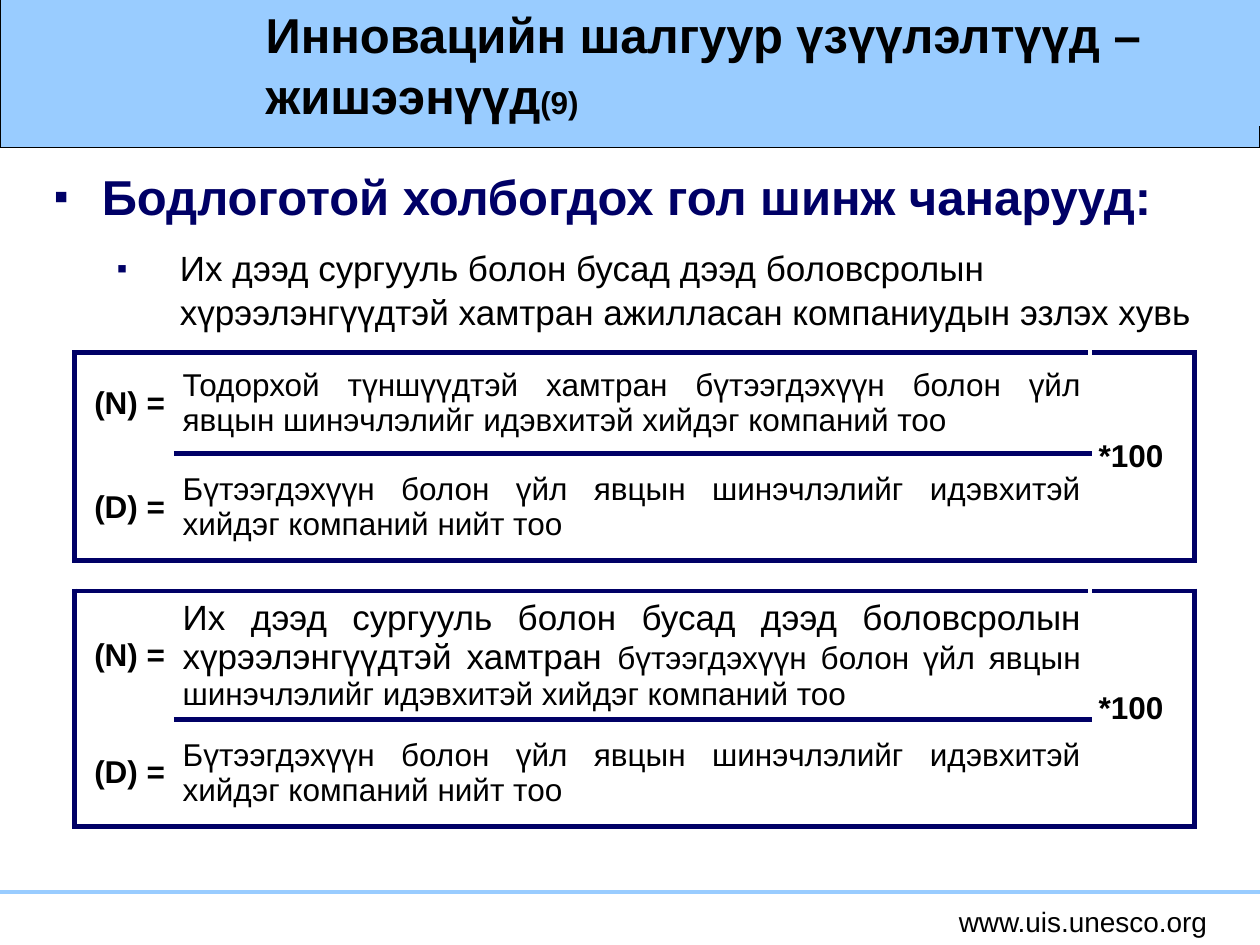
import pptx
import pptx.util
import pptx.dml.color
import pptx.enum.shapes
import pptx.enum.text
import pptx.oxml.ns
import lxml.etree

ALIGN = pptx.enum.text.PP_ALIGN
MIDDLE = pptx.enum.text.MSO_ANCHOR.MIDDLE
NAVY, SKY, BLACK, WHITE = "000066", "99CCFF", "000000", "FFFFFF"


def cell_unit(count):
    """Length of a number of grid cells; the slide is 100 columns by 75 rows."""
    return pptx.util.Inches(count / 10)


def colour(hex_text):
    return pptx.dml.color.RGBColor.from_string(hex_text)


def add_element(parent, tag, **attributes):
    element = lxml.etree.SubElement(parent, pptx.oxml.ns.qn(tag))
    for name, value in attributes.items():
        element.set(name, str(value))
    return element


def write(frame, runs, first=True, align=ALIGN.LEFT, colour_hex=BLACK, spacing=None,
          before=0, level=0, bullet_indent=None):
    """Write one paragraph; runs holds (text, size, bold), bullet_indent (margin, hanging)."""
    para = frame.paragraphs[0] if first else frame.add_paragraph()
    para.alignment, para.level = align, level
    if spacing:
        para.line_spacing = spacing
    if before:
        para.space_before = pptx.util.Pt(before)
    if bullet_indent:
        margin, hanging = bullet_indent
        properties = para._p.get_or_add_pPr()
        properties.set("marL", str(cell_unit(margin)))
        properties.set("indent", str(-cell_unit(hanging)))
        add_element(add_element(properties, "a:buClr"), "a:srgbClr", val=NAVY)
        add_element(properties, "a:buSzPct", val=85000)
        add_element(properties, "a:buFont", typeface="Arial")
        add_element(properties, "a:buChar", char="▪")
    for text, size, bold in runs:
        span = para.add_run()
        span.text = text
        span.font.name = "Arial"
        span.font.size = pptx.util.Pt(size)
        span.font.bold = bold
        span.font.color.rgb = colour(colour_hex)


def set_borders(cell, **sides):
    """Colour the named sides (L, R, T, B) and hide the others."""
    properties = cell._tc.get_or_add_tcPr()
    for side in "LRTB":
        line = add_element(properties, f"a:ln{side}", w=pptx.util.Pt(3))
        if side in sides:
            add_element(add_element(line, "a:solidFill"), "a:srgbClr", val=sides[side])
        else:
            add_element(line, "a:noFill")


class SlideBuilder:
    def __init__(self, deck):
        self.page = deck.slides.add_slide(deck.slide_layouts[6])

    def rectangle(self, *place, fill, line):
        kind = pptx.enum.shapes.MSO_SHAPE.RECTANGLE
        shape = self.page.shapes.add_shape(kind, *map(cell_unit, place))
        shape.shadow.inherit = False
        shape.fill.solid()
        shape.fill.fore_color.rgb = colour(fill)
        shape.line.color.rgb = colour(line)
        shape.line.width = pptx.util.Pt(0.75)

    def rule(self, *ends, line, width):
        kind = pptx.enum.shapes.MSO_CONNECTOR.STRAIGHT
        connector = self.page.shapes.add_connector(kind, *map(cell_unit, ends))
        connector.line.color.rgb = colour(line)
        connector.line.width = pptx.util.Pt(width)
        add_element(connector._element.spPr, "a:effectLst")

    def text_box(self, *place, wrap=True, fill=None, anchor=None):
        box = self.page.shapes.add_textbox(*map(cell_unit, place))
        box.text_frame.word_wrap = wrap
        if anchor is not None:
            box.text_frame.vertical_anchor = anchor
        if fill:
            box.fill.solid()
            box.fill.fore_color.rgb = colour(fill)
        return box.text_frame

    def fraction_table(self, top, heights, numerator, denominator):
        """Draw a framed ratio: numerator over denominator, times one hundred."""
        widths = (7.9, 72.7, 8.3)
        place = map(cell_unit, (5.9, top, sum(widths), sum(heights)))
        table = self.page.shapes.add_table(2, 3, *place).table
        table.first_row = table.horz_banding = False
        for column, width in zip(table.columns, widths):
            column.width = cell_unit(width)
        for row, height in zip(table.rows, heights):
            row.height = cell_unit(height)
        table.cell(0, 2).merge(table.cell(1, 2))

        contents = (("(N) =", numerator, "T"), ("(D) =", denominator, "B"))
        for index, (label, runs, outer_side) in enumerate(contents):
            label_cell, formula, factor = (table.cell(index, number) for number in range(3))
            set_borders(label_cell, L=NAVY, **{outer_side: NAVY})
            set_borders(formula, T=NAVY, R=WHITE, B=NAVY)
            set_borders(factor, L=WHITE, R=NAVY, T=NAVY, B=NAVY)
            write(label_cell.text_frame, [(label, 18, True)], align=ALIGN.RIGHT)
            write(formula.text_frame, runs, align=ALIGN.JUSTIFY)
            for cell in (label_cell, formula, factor):
                cell.vertical_anchor = MIDDLE
                cell.margin_left = cell.margin_right = cell_unit(0.7)
                cell.margin_top = cell.margin_bottom = 0
                cell.fill.background()
        write(table.cell(0, 2).text_frame, [("*100", 18, True)])


def main():
    deck = pptx.Presentation()
    deck.slide_width, deck.slide_height = cell_unit(100), cell_unit(75)
    builder = SlideBuilder(deck)

    builder.rectangle(0, -0.8, 100, 12.5, fill=SKY, line=BLACK)
    builder.rule(0, 70.8, 100, 70.8, line=SKY, width=2.25)
    footer = builder.text_box(75, 71.3, 21.9, 3.7, wrap=False)
    write(footer, [("www.uis.unesco.org", 16, False)], align=ALIGN.CENTER)

    title = builder.text_box(20.1, 0, 79.9, 10, fill=SKY, anchor=MIDDLE)
    write(title, [("Инновацийн шалгуур үзүүлэлтүүд – жишээнүүд", 28, True),
                  ("(9)", 18, True)], spacing=1.05)

    body = builder.text_box(3.3, 12.5, 93.3, 14)
    write(body, [("Бодлоготой холбогдох гол шинж чанарууд:", 28, True)],
          align=ALIGN.JUSTIFY, colour_hex=NAVY, spacing=1.05, bullet_indent=(3.8, 3.8))
    write(body, [("Их дээд сургууль болон бусад дээд боловсролын хүрээлэнгүүдтэй "
                  "хамтран ажилласан компаниудын эзлэх хувь", 20, False)],
          first=False, spacing=1.05, before=11, level=1, bullet_indent=(10, 5))

    innovators = "бүтээгдэхүүн болон үйл явцын шинэчлэлийг идэвхитэй хийдэг компаний тоо"
    all_innovators = [("Бүтээгдэхүүн болон үйл явцын шинэчлэлийг идэвхитэй "
                       "хийдэг компаний нийт тоо", 18, False)]
    builder.fraction_table(
        28, (8, 8.5), [("Тодорхой түншүүдтэй хамтран " + innovators, 18, False)],
        all_innovators)
    builder.fraction_table(
        46.9, (10.2, 8.5),
        [("Их дээд сургууль болон бусад дээд боловсролын хүрээлэнгүүдтэй хамтран ", 20, False),
         (innovators, 18, False)], all_innovators)

    deck.save("out.pptx")


if __name__ == "__main__":
    main()
